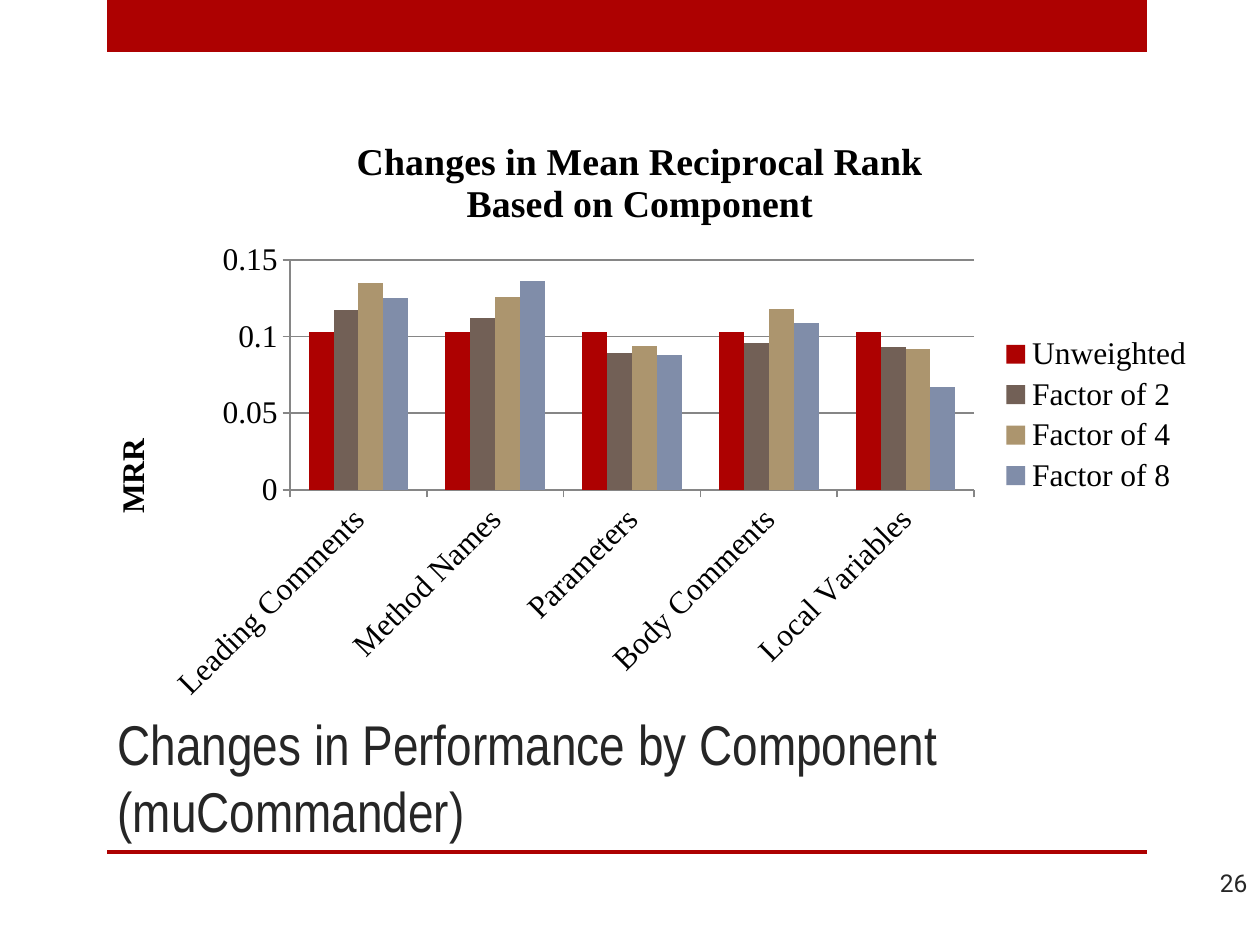
from lxml import etree
from pptx import Presentation
from pptx.chart.data import CategoryChartData
from pptx.dml.color import RGBColor
from pptx.enum.chart import XL_CHART_TYPE, XL_LEGEND_POSITION, XL_TICK_MARK
from pptx.enum.shapes import MSO_SHAPE
from pptx.enum.text import MSO_ANCHOR, MSO_AUTO_SIZE, PP_ALIGN
from pptx.oxml.ns import qn
from pptx.util import Pt

COLUMNS = XL_CHART_TYPE.COLUMN_CLUSTERED
LEGEND_RIGHT = XL_LEGEND_POSITION.RIGHT
TICK_OUT = XL_TICK_MARK.OUTSIDE
RECT = MSO_SHAPE.RECTANGLE
LEFT, RIGHT = PP_ALIGN.LEFT, PP_ALIGN.RIGHT
BOTTOM, MIDDLE = MSO_ANCHOR.BOTTOM, MSO_ANCHOR.MIDDLE

TITLE = "Changes in Performance by Component (muCommander)"
PAGE = "26"
CHART_TITLE = "Changes in Mean Reciprocal Rank\nBased on Component"
VALUE_TITLE = "MRR"
CATEGORIES = ["Leading Comments", "Method Names", "Parameters",
              "Body Comments", "Local Variables"]
SERIES = [
    ("Unweighted", "red", [0.103, 0.103, 0.103, 0.103, 0.103]),
    ("Factor of 2", "brown", [0.117, 0.112, 0.089, 0.096, 0.093]),
    ("Factor of 4", "tan", [0.135, 0.126, 0.094, 0.118, 0.092]),
    ("Factor of 8", "blue", [0.125, 0.136, 0.088, 0.109, 0.067]),
]
COLORS = {"red": "AD0101", "brown": "726056", "tan": "AC956E", "blue": "808DA9",
          "text": "262626", "black": "000000", "grid": "868686"}

# Boxes in px: left, top, width, height
PX = 914400 / 126
SLIDE = (1260, 945)
BARS = [(107, 0, 1040, 52), (107, 850, 1040, 4)]
TITLE_BOX = (105, 630, 935, 220)
PAGE_BOX = (1176, 854, 84, 57)
CHART_BOX = (73, 116, 1134, 598)
PLOT_BOX = (290, 260, 684, 230)
VALUE_TITLE_AT = (107, 433)


def emu(*lengths):
    return [round(n * PX) for n in lengths]


def rgb(name):
    return RGBColor.from_string(COLORS[name])


def set_font(font, name, size, color, bold=False):
    font.name, font.size, font.bold = name, Pt(size), bold
    font.color.rgb = rgb(color)


def set_text(tf, text, name, size, align, anchor):
    tf.text = text
    tf.word_wrap = True
    tf.auto_size = MSO_AUTO_SIZE.NONE
    tf.vertical_anchor = anchor
    p = tf.paragraphs[0]
    p.alignment = align
    set_font(p.runs[0].font, name, size, "text")


def set_chart_title(tf, text, size):
    tf.text = text
    for p in tf.paragraphs:
        set_font(p.runs[0].font, "Times New Roman", size, "black", True)


def manual_layout(box, inner=False):
    """Return a c:layout placing a px box as fractions of the chart."""
    layout = etree.Element(qn("c:layout"))
    manual = etree.SubElement(layout, qn("c:manualLayout"))
    values = [("layoutTarget", "inner")] if inner else []
    values += [("xMode", "edge"), ("yMode", "edge")]
    left, top, width, height = CHART_BOX
    fractions = ((box[0] - left) / width, (box[1] - top) / height)
    fractions += tuple(n / whole for n, whole in zip(box[2:], (width, height)))
    values += [(tag, f"{n:.4f}") for tag, n in zip("xywh", fractions)]
    for tag, value in values:
        etree.SubElement(manual, qn("c:" + tag)).set("val", value)
    return layout


def add_chart(slide):
    data = CategoryChartData(number_format="General")
    data.categories = CATEGORIES
    for name, _, values in SERIES:
        data.add_series(name, values)
    chart = slide.shapes.add_chart(COLUMNS, *emu(*CHART_BOX), data).chart
    set_font(chart.font, "Times New Roman", 18, "black")
    set_chart_title(chart.chart_title.text_frame, CHART_TITLE, 21.6)
    chart.chart_title.include_in_layout = False

    chart.has_legend = True
    chart.legend.position = LEGEND_RIGHT
    chart.legend.include_in_layout = False

    plot = chart.plots[0]
    plot.gap_width, plot.overlap, plot.vary_by_categories = 150, 0, False
    for series, (_, color, _) in zip(plot.series, SERIES):
        series.format.fill.solid()
        series.format.fill.fore_color.rgb = rgb(color)

    cat, val = chart.category_axis, chart.value_axis
    val.minimum_scale, val.maximum_scale, val.major_unit = 0, 0.15, 0.05
    val.has_major_gridlines = True
    for axis in (cat, val):
        axis.major_tick_mark = TICK_OUT
    for line in (cat.format.line, val.format.line, val.major_gridlines.format.line):
        line.color.rgb = rgb("grid")
        line.width = Pt(1)
    set_font(cat.tick_labels.font, "Times New Roman", 18, "black")
    cat._element.find(qn("c:txPr")).find(qn("a:bodyPr")).set("rot", "-2700000")

    set_chart_title(val.axis_title.text_frame, VALUE_TITLE, 18)
    title = val.axis_title._element
    body = title.find(".//" + qn("a:bodyPr"))
    body.set("rot", "-5400000")
    body.set("vert", "horz")
    for parent, after, layout in (
        (title, title.find(qn("c:tx")), manual_layout(VALUE_TITLE_AT)),
        (plot._element.getparent(), None, manual_layout(PLOT_BOX, True)),
    ):
        for old in parent.findall(qn("c:layout")):
            parent.remove(old)
        parent.insert(0 if after is None else 1, layout)


def main():
    prs = Presentation()
    prs.slide_width, prs.slide_height = emu(*SLIDE)
    slide = prs.slides.add_slide(prs.slide_layouts[5])

    for box in BARS:
        sp = slide.shapes.add_shape(RECT, *emu(*box))
        sp.shadow.inherit = False
        sp.fill.solid()
        sp.fill.fore_color.rgb = rgb("red")
        sp.line.fill.background()

    title = slide.shapes.title
    title.left, title.top, title.width, title.height = emu(*TITLE_BOX)
    set_text(title.text_frame, TITLE, "Arial Narrow", 32, LEFT, BOTTOM)

    page = slide.shapes.add_textbox(*emu(*PAGE_BOX))
    set_text(page.text_frame, PAGE, "Roboto", 14, RIGHT, MIDDLE)

    add_chart(slide)
    prs.save("out.pptx")


if __name__ == "__main__":
    main()
